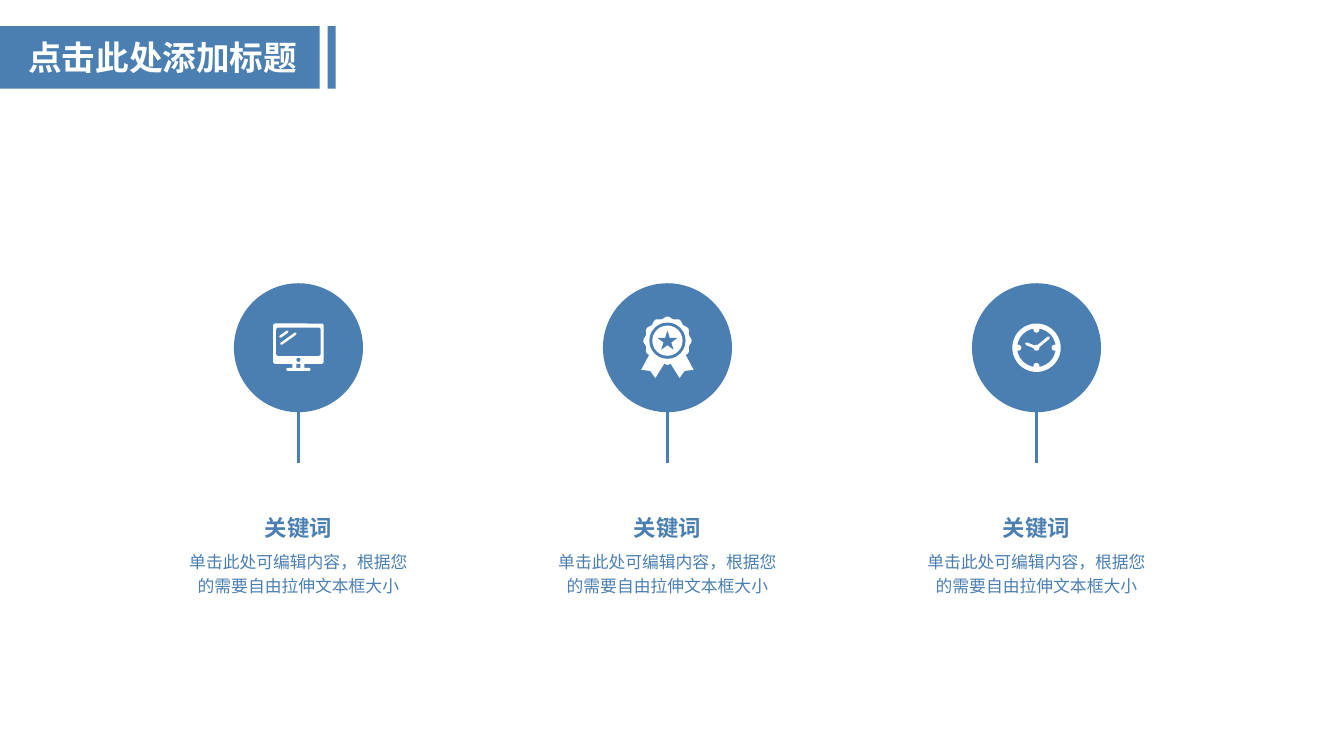
import math

import pptx
import pptx.dml.color
import pptx.enum.shapes
import pptx.enum.text
import pptx.oxml.ns
import pptx.util
from pptx.util import Inches
from lxml import etree

BLUE = "4B7FB1"
WHITE = "FFFFFF"
SHAPE = pptx.enum.shapes.MSO_SHAPE
ICON_Y = 3.45


def color(value):
    """Turn a hex string into a colour."""
    return pptx.dml.color.RGBColor.from_string(value)


def paint(shape, fill):
    """Give a shape a flat fill without line or shadow."""
    shape.shadow.inherit = False
    shape.fill.solid()
    shape.fill.fore_color.rgb = color(fill)
    shape.line.fill.background()
    return shape


def add_block(slide, kind, left, top, width, height, fill):
    """Add a flat preset shape."""
    return paint(slide.shapes.add_shape(
        kind, Inches(left), Inches(top), Inches(width), Inches(height)), fill)


def add_disc(slide, x, y, radius, fill):
    """Add a circle around a centre."""
    return add_block(slide, SHAPE.OVAL, x - radius, y - radius,
                     2 * radius, 2 * radius, fill)


def add_polygon(slide, points, fill):
    """Add a closed outline through points given in inches."""
    corners = [(Inches(x), Inches(y)) for x, y in points]
    builder = slide.shapes.build_freeform(*corners[0], scale=1.0)
    builder.add_line_segments(corners[1:], close=True)
    return paint(builder.convert_to_shape(), fill)


def add_line(slide, start, end, stroke, width, cap="flat"):
    """Add a straight line without shadow."""
    line = slide.shapes.add_connector(
        pptx.enum.shapes.MSO_CONNECTOR.STRAIGHT,
        *(Inches(value) for value in start + end))
    line.line.color.rgb = color(stroke)
    line.line.width = pptx.util.Pt(width)
    properties = line.element.spPr
    properties.find(pptx.oxml.ns.qn("a:ln")).set("cap", cap)
    etree.SubElement(properties, pptx.oxml.ns.qn("a:effectLst"))


def format_runs(paragraph, size, fill, bold):
    """Format every run of a paragraph."""
    for run in paragraph.runs:
        run.font.name = "Arial"
        run.font.size = pptx.util.Pt(size)
        run.font.bold = bold
        run.font.color.rgb = color(fill)


def add_caption(slide, x, top, width, height, text, size, bold=False):
    """Add a centred text box around a column axis."""
    frame = slide.shapes.add_textbox(
        Inches(x - width / 2), Inches(top), Inches(width), Inches(height)).text_frame
    frame.margin_left = frame.margin_right = 0
    frame.margin_top = frame.margin_bottom = 0
    frame.word_wrap = True
    frame.auto_size = pptx.enum.text.MSO_AUTO_SIZE.SHAPE_TO_FIT_TEXT
    frame.text = text
    paragraph = frame.paragraphs[0]
    paragraph.alignment = pptx.enum.text.PP_ALIGN.CENTER
    paragraph.line_spacing = 1.2
    format_runs(paragraph, size, BLUE, bold)


def add_title(slide, text):
    """Place the title on its band with the bar beside it."""
    title = slide.shapes.title
    title.left, title.top = Inches(0.18), Inches(0.32)
    title.width, title.height = Inches(3.15), Inches(0.5)
    for left, width in ((3.25, 0.08), (0, 3.17)):
        band = add_block(slide, SHAPE.RECTANGLE, left, 0.26, width, 0.62, BLUE)
        title.element.addprevious(band.element)
    frame = title.text_frame
    frame.text = text
    frame.word_wrap = True
    frame.auto_size = pptx.enum.text.MSO_AUTO_SIZE.NONE
    frame.vertical_anchor = pptx.enum.text.MSO_ANCHOR.MIDDLE
    frame.paragraphs[0].alignment = pptx.enum.text.PP_ALIGN.LEFT
    format_runs(frame.paragraphs[0], 24, WHITE, True)


def add_monitor(slide, x, y):
    """Draw a desktop monitor."""
    parts = (
        (SHAPE.ROUNDED_RECTANGLE, -0.25, -0.24, 0.5, 0.4, WHITE, 0.05),
        (SHAPE.ROUNDED_RECTANGLE, -0.22, -0.2, 0.44, 0.28, BLUE, 0.07),
        (SHAPE.OVAL, -0.02, 0.1, 0.04, 0.04, BLUE, None),
        (SHAPE.RECTANGLE, -0.06, 0.15, 0.12, 0.06, WHITE, None),
        (SHAPE.RECTANGLE, -0.02, 0.16, 0.04, 0.04, BLUE, None),
        (SHAPE.ROUNDED_RECTANGLE, -0.12, 0.2, 0.24, 0.03, WHITE, 0.5),
    )
    for kind, left, top, width, height, fill, rounding in parts:
        part = add_block(slide, kind, x + left, y + top, width, height, fill)
        if rounding is not None:
            part.adjustments[0] = rounding
    for start, end in (((-0.18, -0.11), (-0.11, -0.16)),
                       ((-0.17, -0.04), (-0.03, -0.14))):
        add_line(slide, (x + start[0], y + start[1]),
                 (x + end[0], y + end[1]), WHITE, 1.75, "rnd")


def add_badge(slide, x, y):
    """Draw a rosette with two ribbons and a star."""
    ribbon = ((-0.18, 0.07), (-0.26, 0.22), (-0.17, 0.23), (-0.12, 0.3), (-0.02, 0.14))
    for side in (1, -1):
        add_polygon(slide, [(x + side * dx, y + dy) for dx, dy in ribbon], WHITE)
    middle = y - 0.07
    rosette = []
    for step in range(96):
        angle = math.tau * step / 96
        radius = 0.23 + 0.01 * math.cos(12 * angle)
        rosette.append((x + radius * math.sin(angle), middle - radius * math.cos(angle)))
    add_polygon(slide, rosette, WHITE)
    add_disc(slide, x, middle, 0.18, BLUE)
    add_disc(slide, x, middle, 0.15, WHITE)
    add_block(slide, SHAPE.STAR_5_POINT, x - 0.1, middle - 0.1, 0.2, 0.19, BLUE)


def add_clock(slide, x, y):
    """Draw a clock with four marks and two hands."""
    rim = add_block(slide, SHAPE.DONUT, x - 0.24, y - 0.24, 0.48, 0.48, WHITE)
    rim.adjustments[0] = 0.1
    for dx, dy in ((0, -1), (1, 0), (0, 1), (-1, 0)):
        add_disc(slide, x + 0.18 * dx, y + 0.18 * dy, 0.03, WHITE)
    for dx, dy in ((0.12, -0.1), (-0.1, -0.04)):
        add_line(slide, (x, y), (x + dx, y + dy), WHITE, 2, "rnd")
    add_disc(slide, x, y, 0.03, WHITE)


def add_column(slide, x, draw_icon):
    """Add one keyword column around its axis."""
    add_line(slide, (x, 3.55), (x, 4.59), BLUE, 2)
    add_disc(slide, x, ICON_Y, 0.64, BLUE)
    add_caption(slide, x, 5.43, 2.31, 0.46,
                "单击此处可编辑内容，根据您的需要自由拉伸文本框大小", 12)
    add_caption(slide, x, 5.05, 1, 0.3, "关键词", 16, True)
    draw_icon(slide, x, ICON_Y)


def main():
    """Build the slide and save it."""
    deck = pptx.Presentation()
    deck.slide_width, deck.slide_height = Inches(13.33), Inches(7.5)
    slide = deck.slides.add_slide(deck.slide_layouts[5])
    add_title(slide, "点击此处添加标题")
    for column, draw_icon in enumerate((add_monitor, add_badge, add_clock)):
        add_column(slide, 2.96 + 3.66 * column, draw_icon)
    deck.save("out.pptx")


if __name__ == "__main__":
    main()
